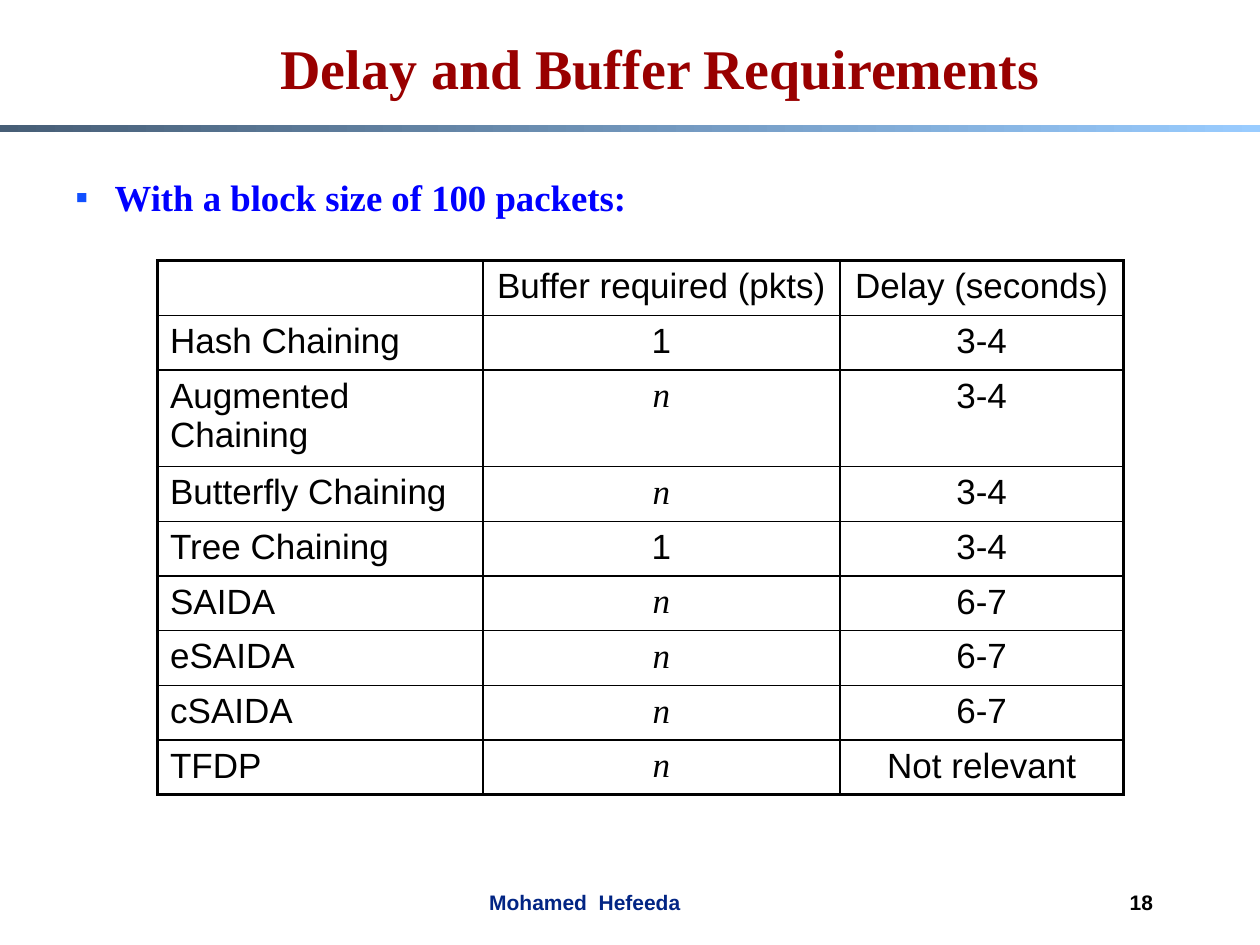
import pptx
import pptx.util
import pptx.dml.color
import pptx.enum.shapes
import pptx.enum.text
import pptx.oxml
import pptx.oxml.ns

Pt = pptx.util.Pt
ALIGN = pptx.enum.text.PP_ALIGN
ANCHOR = pptx.enum.text.MSO_ANCHOR

COLORS = {
    "title": "990000",
    "body": "0000FF",
    "bullet": "114FFF",
    "footer": "022584",
    "text": "000000",
    "border": "000000",
    "rule_start": "475E76",
    "rule_end": "99CCFF",
}
SANS, SERIF = "Arial", "Times New Roman"
HEADER = ("", "Buffer required (pkts)", "Delay (seconds)")
SCHEMES = [
    ("Hash Chaining", "1", "3-4"),
    ("Augmented Chaining", "n", "3-4"),
    ("Butterfly Chaining", "n", "3-4"),
    ("Tree Chaining", "1", "3-4"),
    ("SAIDA", "n", "6-7"),
    ("eSAIDA", "n", "6-7"),
    ("cSAIDA", "n", "6-7"),
    ("TFDP", "n", "Not relevant"),
]
COLUMN_WIDTHS = (186, 204, 162)
ROW_HEIGHT, TALL_ROW_HEIGHT = 29.5, 51.9
TALL_ROW = 2


def rgb(name):
    """Return the named colour."""
    return pptx.dml.color.RGBColor.from_string(COLORS[name])


def xml(tag, attributes="", content=""):
    """Return a drawing element built from its tag, attributes and content."""
    namespace = pptx.oxml.ns.nsdecls("a")
    return pptx.oxml.parse_xml(f"<a:{tag} {namespace} {attributes}>{content}</a:{tag}>")


def style(paragraph, font_name, size, color, alignment, bold=False, italic=False):
    """Set the alignment of a paragraph and the font of its runs."""
    paragraph.alignment = alignment
    for run in paragraph.runs:
        run.font.name = font_name
        run.font.size = Pt(size)
        run.font.color.rgb = rgb(color)
        run.font.bold = bold
        run.font.italic = italic


def add_text(slide, box, text, font_name, size, color, alignment, anchor=ANCHOR.TOP):
    """Add a bold line of text in a box and return its paragraph."""
    shape = slide.shapes.add_textbox(*map(Pt, box))
    text_frame = shape.text_frame
    text_frame.word_wrap = True
    text_frame.vertical_anchor = anchor
    text_frame.text = text
    paragraph = text_frame.paragraphs[0]
    style(paragraph, font_name, size, color, alignment, bold=True)
    return paragraph


def add_heading(slide, left, top, width):
    """Add the title and the gradient rule below it."""
    rule = slide.shapes.add_shape(
        pptx.enum.shapes.MSO_SHAPE.RECTANGLE, Pt(left), Pt(top + 71.3), Pt(width), Pt(4))
    rule.shadow.inherit = False
    rule.line.fill.background()
    rule.fill.gradient()
    rule.fill.gradient_angle = 0
    for stop, name in zip(rule.fill.gradient_stops, ("rule_start", "rule_end")):
        stop.color.rgb = rgb(name)
    add_text(slide, (left + 72, top + 16.5, 610.5, 44.5), "Delay and Buffer Requirements",
             SERIF, 32, "title", ALIGN.CENTER, ANCHOR.BOTTOM)


def add_body(slide, left, top, width, height):
    """Add the bulleted statement."""
    paragraph = add_text(slide, (left, top, width, height), "With a block size of 100 packets:",
                         SERIF, 21, "body", ALIGN.LEFT)
    paragraph.line_spacing = 1.1
    properties = paragraph._p.get_or_add_pPr()
    properties.set("marL", str(Pt(22.5)))
    properties.set("indent", str(-Pt(22.5)))
    properties.append(xml("buClr", content=f'<a:srgbClr val="{COLORS["bullet"]}"/>'))
    properties.append(xml("buFont", f'typeface="{SANS}"'))
    properties.append(xml("buChar", 'char="▪"'))


def set_borders(cell, widths):
    """Draw the left, right, top and bottom borders of a cell."""
    properties = cell._tc.get_or_add_tcPr()
    fill = f'<a:solidFill><a:srgbClr val="{COLORS["border"]}"/></a:solidFill>'
    for index, (side, width) in enumerate(zip("LRTB", widths)):
        properties.insert(index, xml(f"ln{side}", f'w="{Pt(width)}"', fill))


def add_requirements_table(slide, left, top):
    """Add the table of buffer and delay for each scheme."""
    rows = [HEADER, *SCHEMES]
    heights = [TALL_ROW_HEIGHT if index == TALL_ROW else ROW_HEIGHT for index in range(len(rows))]
    frame = slide.shapes.add_table(len(rows), len(HEADER), Pt(left), Pt(top),
                                   Pt(sum(COLUMN_WIDTHS)), Pt(sum(heights)))
    table = frame.table
    table.first_row = table.horz_banding = False
    for column, width in zip(table.columns, COLUMN_WIDTHS):
        column.width = Pt(width)
    last_row, last_column = len(rows) - 1, len(HEADER) - 1
    for row_index, values in enumerate(rows):
        table.rows[row_index].height = Pt(heights[row_index])
        for column_index, value in enumerate(values):
            cell = table.cell(row_index, column_index)
            cell.fill.background()
            cell.text = value
            variable = value == "n"
            style(cell.text_frame.paragraphs[0], SERIF if variable else SANS, 20, "text",
                  ALIGN.CENTER if column_index else ALIGN.LEFT, italic=variable)
            outer = (column_index == 0, column_index == last_column,
                     row_index == 0, row_index == last_row)
            set_borders(cell, [2.25 if edge else 1 for edge in outer])


def add_footer(slide, left, top):
    """Add the author and the slide number."""
    for offset, text, color in ((0, "Mohamed  Hefeeda", "footer"), (270, "18", "text")):
        add_text(slide, (left + offset, top, 150, 36), text, SANS, 12, color, ALIGN.RIGHT)


def main():
    """Build and save the slide."""
    presentation = pptx.Presentation()
    presentation.slide_width, presentation.slide_height = Pt(720), Pt(540)
    slide = presentation.slides.add_slide(presentation.slide_layouts[6])
    add_heading(slide, 0, 0, 720)
    add_body(slide, 36, 94, 642, 390)
    add_requirements_table(slide, 90, 149)
    add_footer(slide, 246, 504.5)
    presentation.save("out.pptx")


if __name__ == "__main__":
    main()
